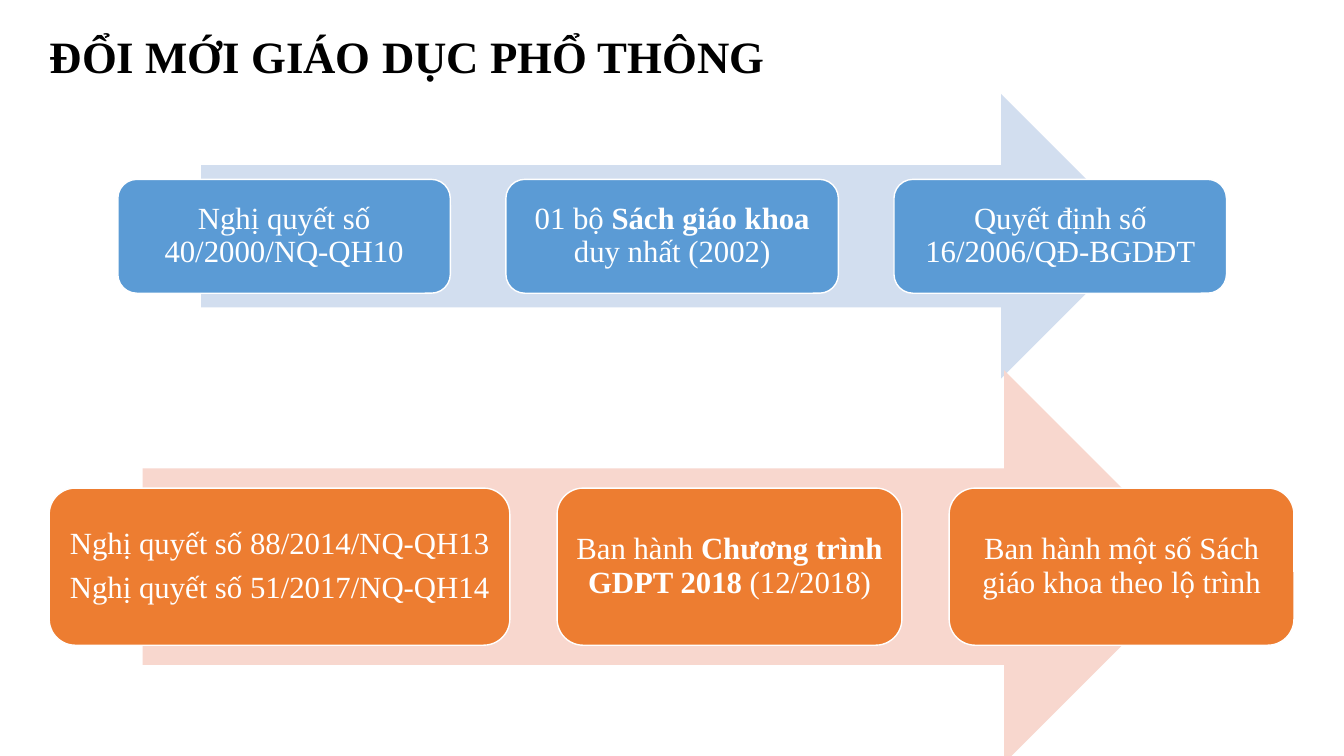
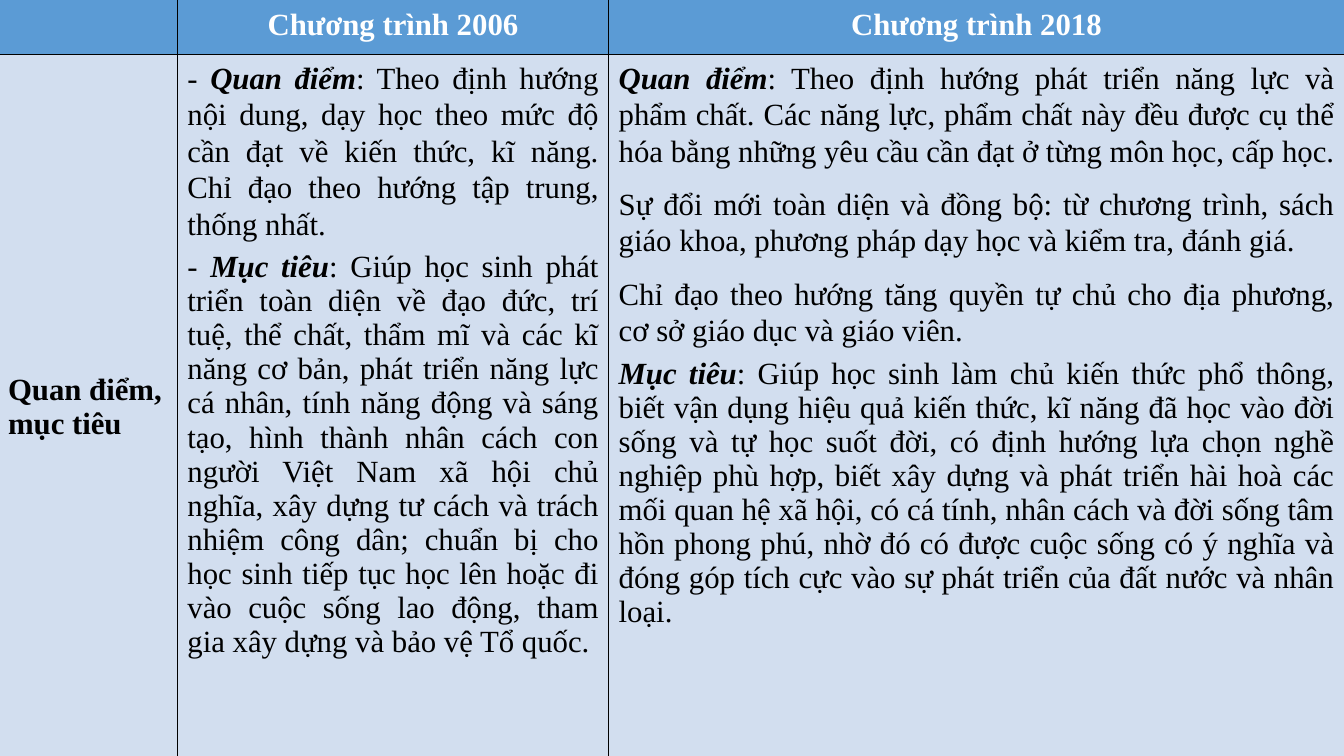
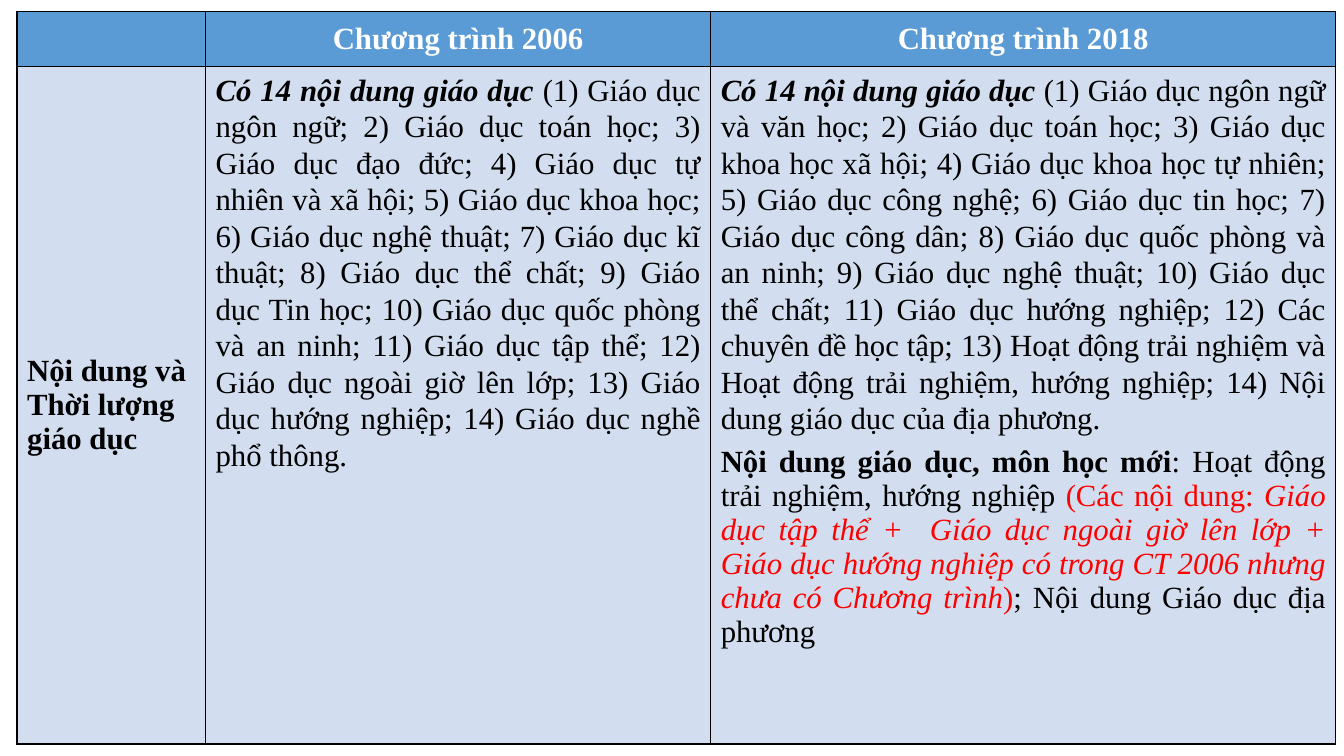
import pptx
import pptx.util
import pptx.dml.color
import pptx.enum.shapes
import pptx.enum.text
import pptx.oxml
import pptx.oxml.ns

Cm = pptx.util.Cm
Pt = pptx.util.Pt
ALIGN = pptx.enum.text.PP_ALIGN
ANCHOR = pptx.enum.text.MSO_ANCHOR
SHAPE = pptx.enum.shapes.MSO_SHAPE

BLUE, PALE_BLUE = "5B9BD5", "D2DEEF"
ORANGE, PALE_ORANGE = "ED7D31", "F8D7CE"
BLACK, WHITE, RED = "000000", "FFFFFF", "FF0000"

# Paragraph spacing: line spacing, points before, points after
TIGHT = (1.0, 0, 0)
LOOSE = (1.07, 6, 6)
BOXED = (0.9, 0, 7.7)
HEADING = (0.9, 0, 0)


def color(hex_text):
    return pptx.dml.color.RGBColor.from_string(hex_text)


class Slides:
    """Holds the deck, its style and the current page."""

    font = "Times New Roman"
    text_size = 22
    title_size = 32

    def __init__(self):
        self.deck = pptx.Presentation()
        self.deck.slide_width = Cm(33.87)
        self.deck.slide_height = Cm(19.05)
        self.page = None

    def add_page(self, layout):
        self.page = self.deck.slides.add_slide(self.deck.slide_layouts[layout])

    def add_spans(self, para, spans, ink, align, spacing=TIGHT, size=text_size):
        """Spans are (text, style); style letters: b bold, i italic, r red."""
        para.alignment = align
        para.line_spacing = spacing[0]
        para.space_before, para.space_after = Pt(spacing[1]), Pt(spacing[2])
        for text, style in spans:
            span = para.add_run()
            span.text = text
            span.font.name = self.font
            span.font.size = Pt(size)
            span.font.bold = "b" in style
            span.font.italic = "i" in style
            span.font.color.rgb = color(RED if "r" in style else ink)

    def add_paragraphs(self, frame, paragraphs, ink, align):
        for number, (spacing, spans) in enumerate(paragraphs):
            para = frame.add_paragraph() if number else frame.paragraphs[0]
            self.add_spans(para, spans, ink, align, spacing)

    def title(self, text, left, top, width, height):
        box = self.page.shapes.title
        box.left, box.top, box.width, box.height = Cm(left), Cm(top), Cm(width), Cm(height)
        frame = box.text_frame
        frame.auto_size = pptx.enum.text.MSO_AUTO_SIZE.NONE
        frame.vertical_anchor = ANCHOR.MIDDLE
        self.add_spans(frame.paragraphs[0], [(text, "b")], BLACK, ALIGN.LEFT,
                       HEADING, self.title_size)

    def shape(self, kind, left, top, width, height, fill, line=None):
        shape = self.page.shapes.add_shape(kind, Cm(left), Cm(top), Cm(width), Cm(height))
        shape.shadow.inherit = False
        shape.fill.solid()
        shape.fill.fore_color.rgb = color(fill)
        if line:
            shape.line.color.rgb = color(line)
            shape.line.width = Pt(1)
        else:
            shape.line.fill.background()
        return shape

    def process(self, left, top, height, gap, steps, fill, pale):
        """A row of boxes over a wide arrow; steps are (width, paragraphs)."""
        total = sum(width for width, _ in steps) + gap * (len(steps) - 1)
        # The arrow is centred on the row: 85% as wide, 2.5 times as high
        self.shape(SHAPE.RIGHT_ARROW, left + total * 0.075, top - height * 0.75,
                   total * 0.85, height * 2.5, pale)
        for width, paragraphs in steps:
            box = self.shape(SHAPE.ROUNDED_RECTANGLE, left, top, width, height, fill, WHITE)
            frame = box.text_frame
            frame.word_wrap = True
            frame.vertical_anchor = ANCHOR.MIDDLE
            frame.margin_left = frame.margin_right = Cm(0.23)
            frame.margin_top = frame.margin_bottom = Cm(0.23)
            self.add_paragraphs(frame, [(BOXED, spans) for spans in paragraphs],
                                WHITE, ALIGN.CENTER)
            left += width + gap

    def border(self, cell):
        properties = cell._tc.get_or_add_tcPr()
        for position, side in enumerate(("lnL", "lnR", "lnT", "lnB")):
            properties.insert(position, pptx.oxml.parse_xml(
                f'<a:{side} {pptx.oxml.ns.nsdecls("a")} w="12700"><a:solidFill>'
                f'<a:srgbClr val="{BLACK}"/></a:solidFill></a:{side}>'))

    def comparison(self, left, top, columns, rows, topic, old, new):
        """Both curricula side by side, with the topic in the first column."""
        table = self.page.shapes.add_table(
            len(rows), len(columns), Cm(left), Cm(top), Cm(sum(columns)), Cm(sum(rows))).table
        for column, width in zip(table.columns, columns):
            column.width = Cm(width)
        for row, height in zip(table.rows, rows):
            row.height = Cm(height)
        headings = [[], [(TIGHT, [("Chương trình 2006", "b")])],
                    [(TIGHT, [("Chương trình 2018", "b")])]]
        contents = [[(TIGHT, [(topic, "b")])], old, new]
        for row, cells in enumerate((headings, contents)):
            for column, paragraphs in enumerate(cells):
                cell = table.cell(row, column)
                cell.fill.solid()
                cell.fill.fore_color.rgb = color(PALE_BLUE if row else BLUE)
                self.border(cell)
                body = row and column
                cell.vertical_anchor = ANCHOR.TOP if body else ANCHOR.MIDDLE
                align = ALIGN.JUSTIFY if body else ALIGN.LEFT if row else ALIGN.CENTER
                self.add_paragraphs(cell.text_frame, paragraphs, BLACK if row else WHITE, align)


def main():
    slides = Slides()

    # Slide 1: two reforms
    slides.add_page(5)
    slides.title("ĐỔI MỚI GIÁO DỤC PHỔ THÔNG", 1, 0.6, 20.85, 1.75)
    slides.process(2.97, 4.52, 2.87, 1.4, [
        (8.38, [[("Nghị quyết số 40/2000/NQ-QH10", "")]]),
        (8.38, [[("01 bộ ", ""), ("Sách giáo khoa ", "b"), ("duy nhất (2002)", "")]]),
        (8.38, [[("Quyết định số 16/2006/QĐ-BGDĐT", "")]]),
    ], BLUE, PALE_BLUE)
    slides.process(1.24, 12.3, 3.96, 1.19, [
        (11.61, [[("Nghị quyết số 88/2014/NQ-QH13", "")],
                 [("Nghị quyết số 51/2017/NQ-QH14", "")]]),
        (8.69, [[("Ban hành ", ""), ("Chương trình GDPT 2018 ", "b"), ("(12/2018)", "")]]),
        (8.69, [[("Ban hành một số Sách giáo khoa theo lộ trình", "")]]),
    ], ORANGE, PALE_ORANGE)

    # Slide 2: views and goals
    slides.add_page(6)
    slides.comparison(
        -0.05, -0.1, (4.52, 10.87, 18.54), (1.47, 17.78), "Quan điểm, mục tiêu",
        [(LOOSE, [("- ", ""), ("Quan điểm", "bi"),
                  (": Theo định hướng nội dung, dạy học theo mức độ cần đạt về kiến thức, "
                   "kĩ năng. Chỉ đạo theo hướng tập trung, thống nhất.", "")]),
         (TIGHT, [("- ", ""), ("Mục tiêu", "bi"),
                  (": Giúp học sinh phát triển toàn diện về đạo đức, trí tuệ, thể chất, thẩm mĩ "
                   "và các kĩ năng cơ bản, phát triển năng lực cá nhân, tính năng động và sáng "
                   "tạo, hình thành nhân cách con người Việt Nam xã hội chủ nghĩa, xây dựng tư "
                   "cách và trách nhiệm công dân; chuẩn bị cho học sinh tiếp tục học lên hoặc đi "
                   "vào cuộc sống lao động, tham gia xây dựng và bảo vệ Tổ quốc.", "")])],
        [(LOOSE, [("Quan điểm", "bi"),
                  (": Theo định hướng phát triển năng lực và phẩm chất. Các năng lực, phẩm chất "
                   "này đều được cụ thể hóa bằng những yêu cầu cần đạt ở từng môn học, "
                   "cấp học.", "")]),
         (LOOSE, [("Sự đổi mới toàn diện và đồng bộ: từ chương trình, sách giáo khoa, phương "
                   "pháp dạy học và kiểm tra, đánh giá.", "")]),
         (LOOSE, [("Chỉ đạo theo hướng tăng quyền tự chủ cho địa phương, cơ sở giáo dục và "
                   "giáo viên.", "")]),
         (TIGHT, [("Mục tiêu", "bi"),
                  (": Giúp học sinh làm chủ kiến thức phổ thông, biết vận dụng hiệu quả kiến "
                   "thức, kĩ năng đã học vào đời sống và tự học suốt đời, có định hướng lựa chọn "
                   "nghề nghiệp phù hợp, biết xây dựng và phát triển hài hoà các mối quan hệ xã "
                   "hội, có cá tính, nhân cách và đời sống tâm hồn phong phú, nhờ đó có được cuộc "
                   "sống có ý nghĩa và đóng góp tích cực vào sự phát triển của đất nước và "
                   "nhân loại.", "")])])

    # Slide 3: contents and teaching time
    slides.add_page(6)
    fourteen = ("Có 14 nội dung giáo dục ", "bi")
    slides.comparison(
        0.43, 0.28, (4.75, 12.73, 15.75), (1.4, 17.07), "Nội dung và Thời lượng giáo dục",
        [(LOOSE, [fourteen,
                  ("(1) Giáo dục ngôn ngữ; 2) Giáo dục toán học; 3) Giáo dục đạo đức; 4) Giáo dục "
                   "tự nhiên và xã hội; 5) Giáo dục khoa học; 6) Giáo dục nghệ thuật; 7) Giáo dục "
                   "kĩ thuật; 8) Giáo dục thể chất; 9) Giáo dục Tin học; 10) Giáo dục quốc phòng "
                   "và an ninh; 11) Giáo dục tập thể; 12) Giáo dục ngoài giờ lên lớp; 13) Giáo "
                   "dục hướng nghiệp; 14) Giáo dục nghề phổ thông.", "")])],
        [(LOOSE, [fourteen,
                  ("(1) Giáo dục ngôn ngữ và văn học; 2) Giáo dục toán học; 3) Giáo dục khoa học "
                   "xã hội; 4) Giáo dục khoa học tự nhiên; 5) Giáo dục công nghệ; 6) Giáo dục tin "
                   "học; 7) Giáo dục công dân; 8) Giáo dục quốc phòng và an ninh; 9) Giáo dục "
                   "nghệ thuật; 10) Giáo dục thể chất; 11) Giáo dục hướng nghiệp; 12) Các chuyên "
                   "đề học tập; 13) Hoạt động trải nghiệm và Hoạt động trải nghiệm, hướng nghiệp; "
                   "14) Nội dung giáo dục của địa phương.", "")]),
         (TIGHT, [("Nội dung giáo dục, môn học mới", "b"),
                  (": Hoạt động trải nghiệm, hướng nghiệp ", ""), ("(Các nội dung: ", "r"),
                  ("Giáo dục tập thể +  Giáo dục ngoài giờ lên lớp + Giáo dục hướng nghiệp có "
                   "trong CT 2006 nhưng chưa có Chương trình", "ir"),
                  (")", "r"), ("; Nội dung Giáo dục địa phương", "")])])

    slides.deck.save("out.pptx")


if __name__ == "__main__":
    main()
